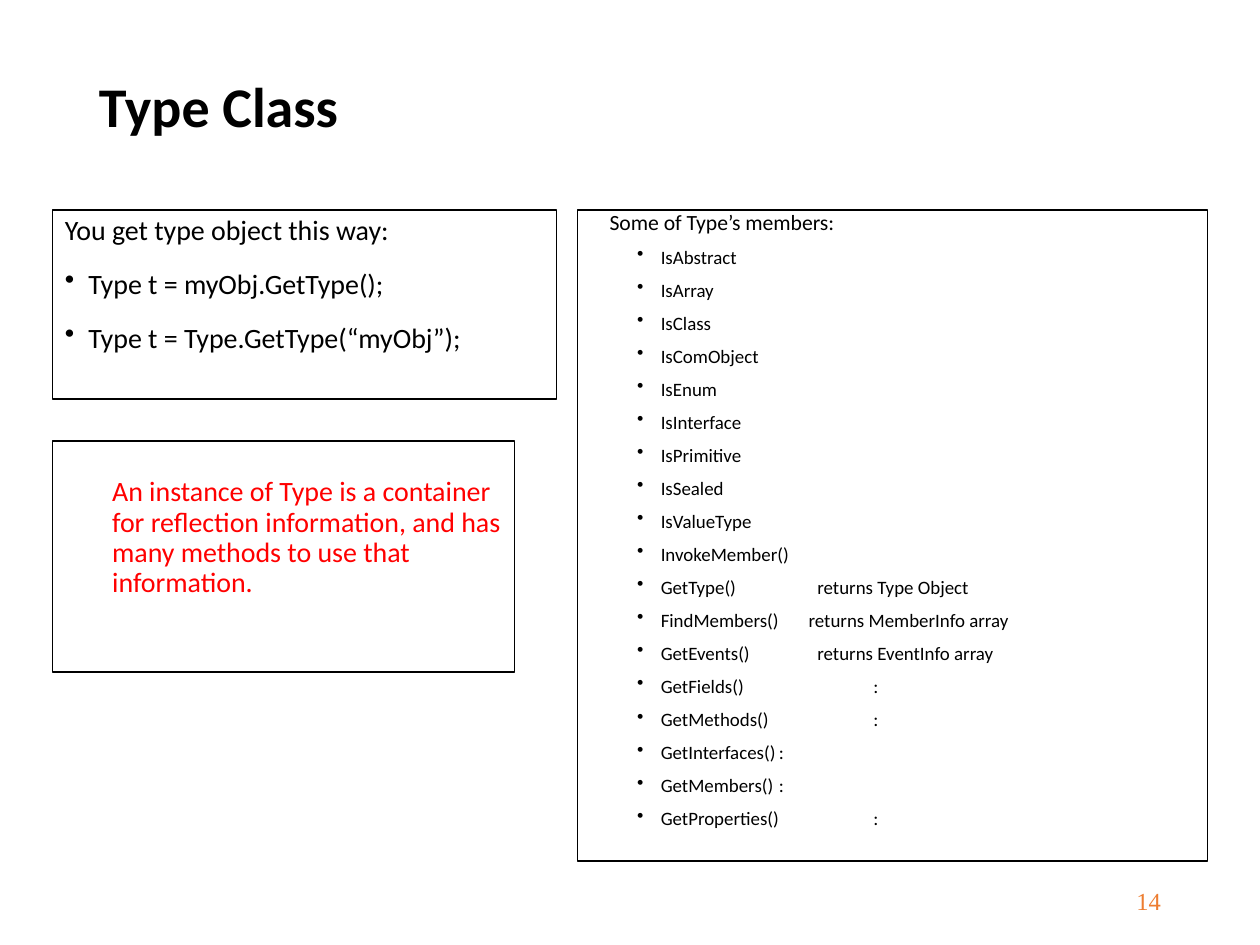
from dataclasses import dataclass

from lxml.etree import SubElement
from pptx import Presentation
from pptx.dml.color import RGBColor
from pptx.enum.shapes import MSO_SHAPE
from pptx.enum.text import MSO_ANCHOR, PP_ALIGN
from pptx.oxml.ns import qn
from pptx.util import Pt


@dataclass(frozen=True)
class Box:
    left: float
    top: float
    width: float
    height: float


@dataclass(frozen=True)
class Member:
    name: str
    note: str = ""
    note_position: float = 0


TITLE_BOX = Box(49.5, 28.8, 621, 67)
USAGE_BOX = Box(30, 120, 288, 108)
MEMBERS_BOX = Box(330, 120, 360, 372)
SUMMARY_BOX = Box(30, 252, 264, 132)
NUMBER_BOX = Box(508.5, 500.4, 162, 28.8)

USAGES = ["Type t = myObj.GetType();", "Type t = Type.GetType(“myObj”);"]
MEMBERS = [
    Member("IsAbstract"),
    Member("IsArray"),
    Member("IsClass"),
    Member("IsComObject"),
    Member("IsEnum"),
    Member("IsInterface"),
    Member("IsPrimitive"),
    Member("IsSealed"),
    Member("IsValueType"),
    Member("InvokeMember()"),
    Member("GetType()", "returns Type Object", 130),
    Member("FindMembers()", "returns MemberInfo array", 125),
    Member("GetEvents()", "returns EventInfo array", 130),
    Member("GetFields()", ":", 162),
    Member("GetMethods()", ":", 162),
    Member("GetInterfaces()", ":", 108),
    Member("GetMembers()", ":", 108),
    Member("GetProperties()", ":", 162),
]


def color(value: str) -> RGBColor:
    return RGBColor.from_string(value)


def prepare_frame(shape, anchor=MSO_ANCHOR.TOP, top_inset: float = 3.6):
    frame = shape.text_frame
    frame.word_wrap = True
    frame.vertical_anchor = anchor
    frame.margin_left = frame.margin_right = Pt(7.2)
    frame.margin_top, frame.margin_bottom = Pt(top_inset), Pt(3.6)
    return frame


def add_text_box(slide, box: Box):
    shape = slide.shapes.add_textbox(
        Pt(box.left), Pt(box.top), Pt(box.width), Pt(box.height))
    return prepare_frame(shape, MSO_ANCHOR.MIDDLE)


def add_panel(slide, box: Box, top_inset: float = 3.6):
    shape = slide.shapes.add_shape(
        MSO_SHAPE.RECTANGLE, Pt(box.left), Pt(box.top), Pt(box.width), Pt(box.height))
    shape.shadow.inherit = False
    shape.fill.background()
    shape.line.color.rgb = color("000000")
    shape.line.width = Pt(1)
    return prepare_frame(shape, top_inset=top_inset)


def add_text(frame, text: str, *, size: float, font: str = "Calibri",
             fill: str = "000000", bold: bool = False, align=PP_ALIGN.LEFT,
             line_spacing: float = 0.9, before: float = 0, after: float = 0,
             indent: float = 0, bullet: bool = False, tab: float = 0) -> None:
    first = frame.paragraphs[0]
    paragraph = frame.add_paragraph() if first.runs else first
    paragraph.alignment = align
    paragraph.line_spacing = line_spacing
    paragraph.space_before, paragraph.space_after = Pt(before), Pt(after)
    properties = paragraph._p.get_or_add_pPr()
    properties.set("marL", str(Pt(indent)))
    properties.set("indent", str(Pt(-13.5 if bullet else 0)))
    if bullet:
        SubElement(properties, qn("a:buChar"), char="•")
    else:
        SubElement(properties, qn("a:buNone"))
    if tab:
        tab_list = SubElement(properties, qn("a:tabLst"))
        SubElement(tab_list, qn("a:tab"), pos=str(Pt(tab)), algn="l")
    run = paragraph.add_run()
    run.text = text
    run.font.name = font
    run.font.size = Pt(size)
    run.font.bold = bold
    run.font.color.rgb = color(fill)


def add_usage_panel(slide) -> None:
    frame = add_panel(slide, USAGE_BOX)
    add_text(frame, "You get type object this way:", size=16, before=7.5, after=6)
    for usage in USAGES:
        add_text(frame, usage, size=16, before=7.5, after=6, indent=13.5, bullet=True)


def add_members_panel(slide) -> None:
    frame = add_panel(slide, MEMBERS_BOX)
    add_text(frame, "Some of Type’s members:", size=12.4, line_spacing=0.7,
             before=7.5, after=6, indent=11.25)
    for member in MEMBERS:
        text = f"{member.name}\t{member.note}" if member.note else member.name
        add_text(frame, text, size=10.8, line_spacing=0.7, before=3.8, after=6,
                 indent=40.5, bullet=True, tab=member.note_position)


def main() -> None:
    presentation = Presentation()
    presentation.slide_width, presentation.slide_height = Pt(720), Pt(540)
    slide = presentation.slides.add_slide(presentation.slide_layouts[6])
    add_text(add_text_box(slide, TITLE_BOX), "Type Class", size=32, bold=True)
    add_usage_panel(slide)
    add_members_panel(slide)
    add_text(add_text_box(slide, NUMBER_BOX), "14", size=14, font="Times New Roman",
             fill="ED7D31", align=PP_ALIGN.RIGHT, line_spacing=1.0)
    add_text(add_panel(slide, SUMMARY_BOX, top_inset=21),
             "An instance of Type is a container for reflection information, "
             "and has many methods to use that information.",
             size=16, fill="FF0000", indent=27)
    presentation.save("out.pptx")


if __name__ == "__main__":
    main()
